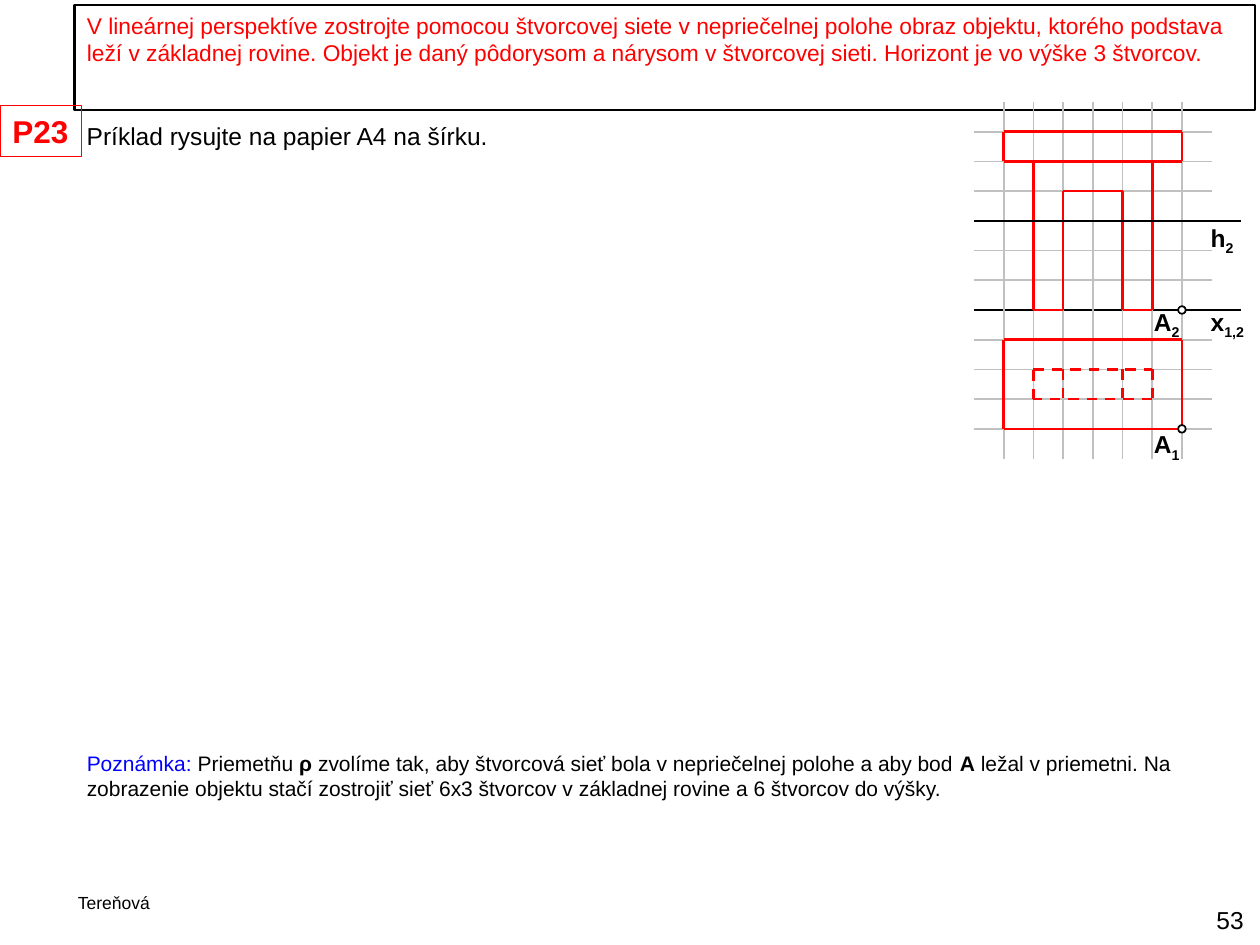
from dataclasses import dataclass
from itertools import pairwise

from lxml.etree import SubElement
from pptx import Presentation
from pptx.dml.color import RGBColor
from pptx.enum.dml import MSO_LINE
from pptx.enum.shapes import MSO_CONNECTOR, MSO_SHAPE
from pptx.enum.text import MSO_ANCHOR, MSO_AUTO_SIZE, PP_ALIGN
from pptx.oxml.ns import qn
from pptx.util import Inches, Pt


@dataclass(frozen=True)
class Theme:
    font: str = "Arial"
    black: RGBColor = RGBColor(0, 0, 0)
    white: RGBColor = RGBColor(255, 255, 255)
    red: RGBColor = RGBColor(255, 0, 0)
    blue: RGBColor = RGBColor(0, 0, 255)
    grey: RGBColor = RGBColor(192, 192, 192)
    badge: int = 18
    body: int = 14
    task: int = 13
    note: int = 12
    footer: int = 10
    thin: float = 1
    thick: float = 1.5


GRID_LEFT, GRID_TOP = 7.73, 0.81
CELL = 2.83 / 12


def grid_point(col, row):
    return GRID_LEFT + col * CELL, GRID_TOP + row * CELL


class SlideBuilder:
    def __init__(self, slide, theme):
        self.s = slide
        self.theme = theme
        self.drawing = slide.shapes.add_group_shape()

    def outline(self, sp, color, width):
        sp.line.color.rgb = color
        sp.line.width = Pt(width)

    def place(self, sp, box):
        for name, value in zip(("left", "top", "width", "height"), box):
            setattr(sp, name, Inches(value))

    def fill_text(self, sp, runs, size, wrap=False, align=PP_ALIGN.LEFT,
                  anchor=MSO_ANCHOR.TOP, **base):
        """Fill a shape with runs, each a text and its own format values."""
        tf = sp.text_frame
        frame = {"word_wrap": wrap, "auto_size": MSO_AUTO_SIZE.SHAPE_TO_FIT_TEXT,
                 "vertical_anchor": anchor}
        for name, value in frame.items():
            setattr(tf, name, value)
        p = tf.paragraphs[0]
        p.alignment = align
        for text, own in runs:
            r = p.add_run()
            r.text = text
            values = {"name": self.theme.font, "size": Pt(size),
                      "color": self.theme.black, **base, **own}
            r.font.color.rgb = values.pop("color")
            if values.pop("subscript", False):
                r._r.get_or_add_rPr().set("baseline", "-25000")
            for name, value in values.items():
                setattr(r.font, name, value)

    def title(self, box, text):
        sp = self.s.shapes.title
        self.place(sp, box)
        self.outline(sp, self.theme.black, self.theme.thick)
        self.fill_text(sp, [(text, {})], self.theme.task, wrap=True, color=self.theme.red)

    def text(self, box, runs, size, **options):
        sp = self.s.shapes.add_textbox(*map(Inches, box))
        self.fill_text(sp, runs, size, **options)

    def label(self, box, letter, index):
        self.text(box, [(letter, {}), (index, {"subscript": True})],
                  self.theme.body, bold=True)

    def badge(self, box, text):
        sp = self.s.shapes.add_shape(MSO_SHAPE.RECTANGLE, *map(Inches, box))
        sp.shadow.inherit = False
        sp.fill.background()
        self.outline(sp, self.theme.red, 0.75)
        self.fill_text(sp, [(text, {})], self.theme.badge, color=self.theme.red, bold=True)

    def line(self, start, end, color, width, dash=None):
        """Join two grid points given as (column, row)."""
        ends = (*grid_point(*start), *grid_point(*end))
        cn = self.drawing.shapes.add_connector(MSO_CONNECTOR.STRAIGHT, *map(Inches, ends))
        self.outline(cn, color, width)
        if dash:
            cn.line.dash_style = dash
        SubElement(cn._element.spPr, qn("a:effectLst"))

    def edges(self, points, dash=None):
        for start, end in pairwise(points):
            self.line(start, end, self.theme.red, self.theme.thick, dash)

    def rectangle(self, left, top, right, bottom, dash=None):
        self.edges([(left, top), (right, top), (right, bottom),
                    (left, bottom), (left, top)], dash)

    def point(self, col, row, size=0.06):
        x, y = grid_point(col, row)
        box = (x - size / 2, y - size / 2, size, size)
        sp = self.s.shapes.add_shape(MSO_SHAPE.OVAL, *map(Inches, box))
        sp.shadow.inherit = False
        sp.fill.solid()
        sp.fill.fore_color.rgb = self.theme.white
        self.outline(sp, self.theme.black, self.theme.thin)


def draw_projections(b):
    t = b.theme
    ground, horizon = 7, 4
    for row in range(1, 12):
        if row != ground:
            b.line((0, row), (8, row), t.grey, t.thin)
    b.line((0, ground), (9, ground), t.black, t.thin)
    for col in range(1, 8):
        b.line((col, 0), (col, 12), t.grey, t.thin)

    b.rectangle(1, 1, 7, 2)
    b.edges([(2, 2), (2, ground), (3, ground), (3, 3),
             (5, 3), (5, ground), (6, ground), (6, 2)])
    b.rectangle(1, 8, 7, 11)
    b.rectangle(2, 9, 6, 10, MSO_LINE.DASH)
    for col in (3, 5):
        b.edges([(col, 9), (col, 10)], MSO_LINE.DASH)
    b.line((0, horizon), (9, horizon), t.black, t.thick)

    b.label((9.51, 2.39, 0.49, 0.34), "x", "1,2")
    b.label((9.51, 1.72, 0.39, 0.34), "h", "2")
    for row, top, index in ((11, 3.36, "1"), (ground, 2.39, "2")):
        b.label((9.06, top, 0.42, 0.34), "A", index)
        b.point(7, row)


def main():
    prs = Presentation()
    prs.slide_width, prs.slide_height = Inches(10), Inches(7.5)
    t = Theme()
    b = SlideBuilder(prs.slides.add_slide(prs.slide_layouts[5]), t)

    b.title((0.59, 0.04, 9.37, 0.54),
            "V lineárnej perspektíve zostrojte pomocou štvorcovej siete v nepriečelnej "
            "polohe obraz objektu, ktorého podstava leží v základnej rovine. Objekt je "
            "daný pôdorysom a nárysom v štvorcovej sieti. Horizont je vo výške 3 štvorcov.")
    draw_projections(b)
    b.badge((0, 0.84, 0.65, 0.4), "P23")
    b.text((0.59, 0.91, 3.4, 0.34),
           [("Príklad rysujte na papier A4 na šírku.", {})], t.body)
    b.text((0.59, 5.91, 9.09, 0.5), [
        ("Poznámka:", {"color": t.blue}),
        (" Priemetňu ", {}),
        ("ρ", {"bold": True}),
        (" zvolíme tak, aby štvorcová sieť bola v nepriečelnej polohe a aby bod ", {}),
        ("A", {"bold": True}),
        (" ležal v priemetni. Na zobrazenie objektu stačí zostrojiť sieť 6x3 štvorcov "
         "v základnej rovine a 6 štvorcov do výšky.", {}),
    ], t.note, wrap=True)
    b.text((0.52, 7.03, 0.79, 0.27), [("Tereňová", {})], t.footer)
    b.text((9.53, 7.13, 0.44, 0.34), [("53", {})], t.body,
           align=PP_ALIGN.RIGHT, anchor=MSO_ANCHOR.MIDDLE)
    prs.save("out.pptx")


if __name__ == "__main__":
    main()
